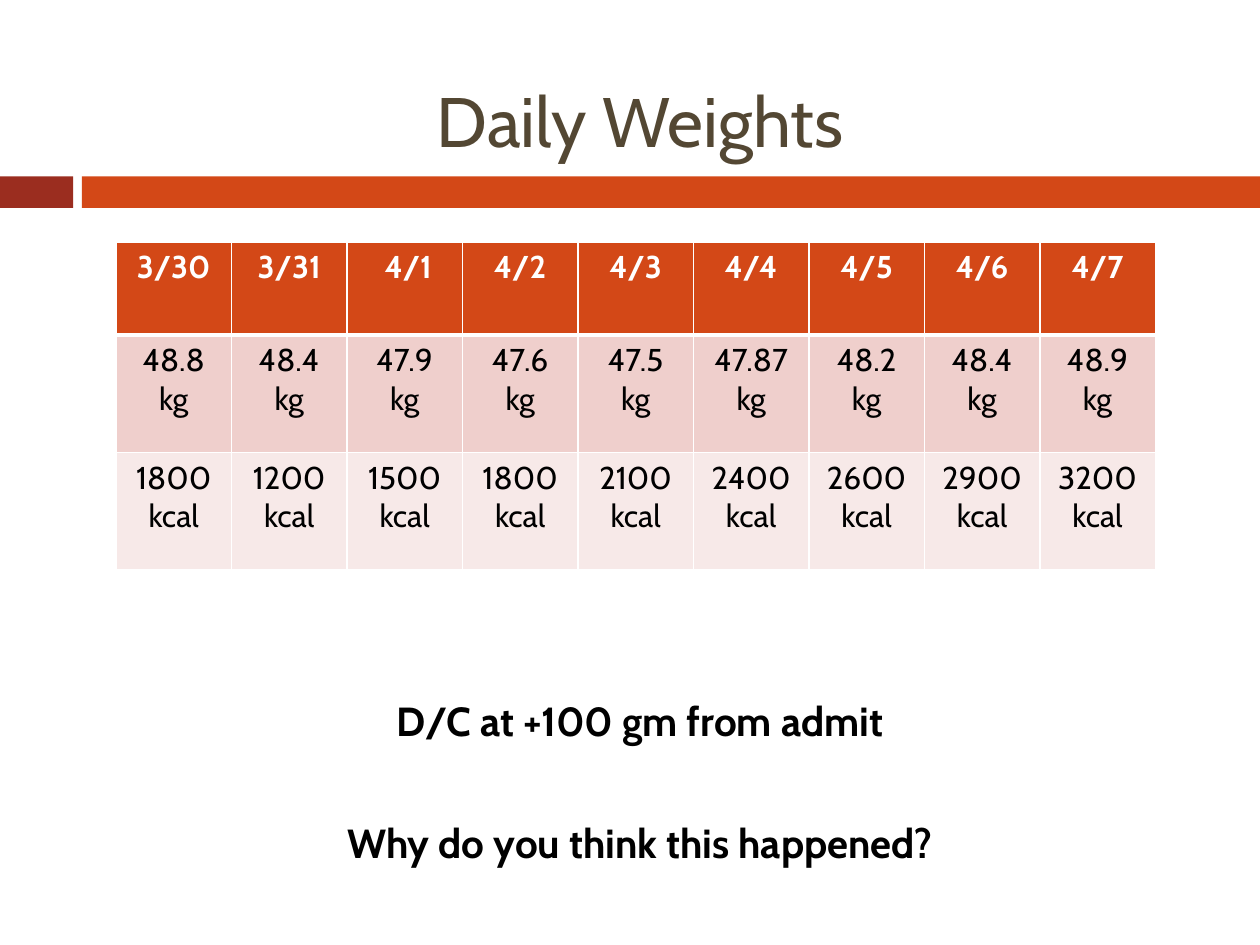
from lxml import etree
from pptx import Presentation
from pptx.dml.color import RGBColor
from pptx.enum import shapes, text
from pptx.oxml.ns import qn
from pptx.util import Inches, Pt

FONT = "Cabin"
ORANGE = RGBColor(0xD3, 0x48, 0x17)
BRICK = RGBColor(0x9B, 0x2D, 0x1F)
BROWN = RGBColor(0x53, 0x47, 0x33)
ROSE = RGBColor(0xEF, 0xCF, 0xCC)
BLUSH = RGBColor(0xF7, 0xE9, 0xE8)
BLACK = RGBColor(0, 0, 0)
WHITE = RGBColor(0xFF, 0xFF, 0xFF)

DATES = ["3/30", "3/31", " 4/1", "4/2", "4/3", "4/4", "4/5", "4/6", "4/7"]
WEIGHTS = [48.8, 48.4, 47.9, 47.6, 47.5, 47.87, 48.2, 48.4, 48.9]
CALORIES = [1800, 1200, 1500, 1800, 2100, 2400, 2600, 2900, 3200]


def add_run(p, words, size, color, bold=False):
    p.alignment = text.PP_ALIGN.CENTER
    r = p.add_run()
    r.text = words
    r.font.name = FONT
    r.font.size = Pt(size)
    r.font.bold = bold
    r.font.color.rgb = color


def place(sp, x, y, w, h):
    sp.left, sp.top, sp.width, sp.height = (Inches(v) for v in (x, y, w, h))
    tf = sp.text_frame
    tf.word_wrap = True
    tf.auto_size = text.MSO_AUTO_SIZE.NONE
    tf.vertical_anchor = text.MSO_ANCHOR.MIDDLE
    return tf


def add_band(s, x, y, w, h):
    tab, gap = 0.58, 0.07
    parts = [(x, tab, BRICK), (x + tab + gap, w - tab - gap, ORANGE)]
    for left, width, color in parts:
        sp = s.shapes.add_shape(shapes.MSO_SHAPE.RECTANGLE, Inches(left),
                                Inches(y), Inches(width), Inches(h))
        sp.shadow.inherit = False
        sp.fill.solid()
        sp.fill.fore_color.rgb = color
        sp.line.fill.background()


def add_title(s, x, y, w, h):
    tf = place(s.shapes.title, x, y, w, h)
    add_run(tf.paragraphs[0], "Daily Weights", 40, BROWN)


def add_remarks(s, x, y, w, h):
    tf = place(s.placeholders[1], x, y, w, h)
    remarks = ["D/C at +100 gm from admit", "Why do you think this happened?"]
    for i, words in enumerate(remarks):
        p = tf.add_paragraph() if i else tf.paragraphs[0]
        p.space_before = Pt(41.5 if i else 0)
        pPr = p._p.get_or_add_pPr()
        pPr.set("marL", "0")
        pPr.set("indent", "0")
        etree.SubElement(pPr, qn("a:buNone"))
        add_run(p, words, 23.2, BLACK, True)


def set_borders(cell, top, bottom):
    tcPr = cell._tc.get_or_add_tcPr()
    for side, width in zip("LRTB", (1, 1, top, bottom)):
        ln = etree.SubElement(tcPr, qn("a:ln" + side), w=str(Pt(width)))
        fill = etree.SubElement(ln, qn("a:solidFill"))
        etree.SubElement(fill, qn("a:srgbClr"), val=str(WHITE))


def add_weights_table(s, x, y, w, h):
    header_h = 0.74
    rows = [
        (DATES, ORANGE, WHITE, header_h),
        ([f"{v} kg" for v in WEIGHTS], ROSE, BLACK, (h - header_h) / 2),
        ([f"{v} kcal" for v in CALORIES], BLUSH, BLACK, (h - header_h) / 2),
    ]
    table = s.shapes.add_table(len(rows), len(DATES), Inches(x), Inches(y),
                               Inches(w), Inches(h)).table
    for col in table.columns:
        col.width = Inches(w / len(DATES))
    for i, (values, fill, color, height) in enumerate(rows):
        table.rows[i].height = Inches(height)
        for j, words in enumerate(values):
            cell = table.cell(i, j)
            set_borders(cell, 3 if i == 1 else 1, 3 if i == 0 else 1)
            cell.fill.solid()
            cell.fill.fore_color.rgb = fill
            add_run(cell.text_frame.paragraphs[0], words, 18, color, i == 0)


def main():
    prs = Presentation()
    prs.slide_width, prs.slide_height = Inches(10), Inches(7.5)
    s = prs.slides.add_slide(prs.slide_layouts[1])
    add_band(s, 0, 1.4, 10, 0.25)
    add_title(s, 0.58, 0.5, 9, 0.9)
    add_remarks(s, 0.58, 5.25, 9, 1.9)
    add_weights_table(s, 0.92, 1.92, 8.25, 2.6)
    prs.save("out.pptx")


if __name__ == "__main__":
    main()
